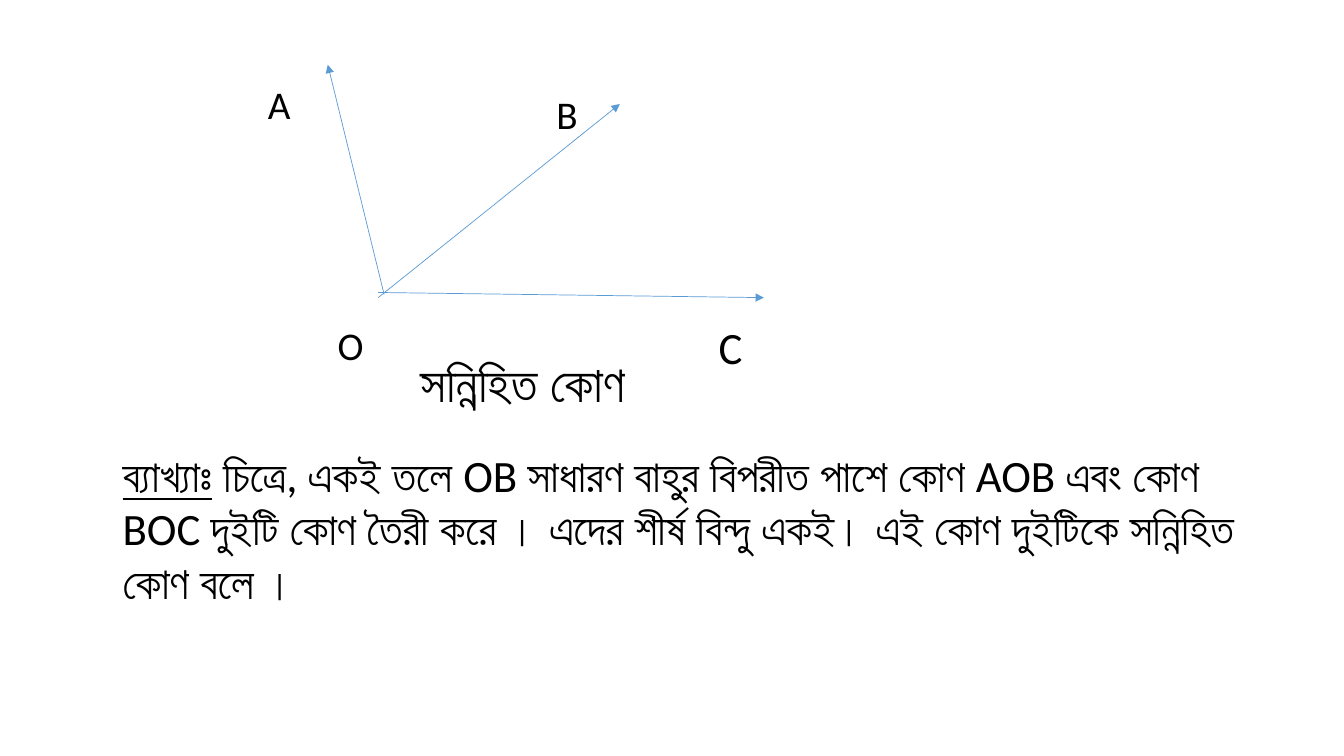
from lxml import etree
from pptx import Presentation
from pptx.dml.color import RGBColor
from pptx.enum.shapes import MSO_CONNECTOR
from pptx.enum.text import MSO_AUTO_SIZE
from pptx.oxml.ns import qn
from pptx.util import Cm, Pt

STRAIGHT = MSO_CONNECTOR.STRAIGHT
GROW = MSO_AUTO_SIZE.SHAPE_TO_FIT_TEXT
FONT = "Calibri"
BLACK = "000000"
BLUE = "5B9BD5"


def color(target, code):
    target.rgb = RGBColor.from_string(code)


def add_ray(shapes, start, end):
    """Draw a thin arrow between two points given in cm."""
    ray = shapes.add_connector(STRAIGHT, *map(Cm, start + end))
    color(ray.line.color, BLUE)
    ray.line.width = Pt(0.5)
    props = ray.line._get_or_add_ln()
    etree.SubElement(props, qn("a:tailEnd"), type="triangle")
    etree.SubElement(ray._element.spPr, qn("a:effectLst"))


def add_text(shapes, box, size, *parts):
    """Add a wrapped text box; each part is (text, underline)."""
    frame = shapes.add_textbox(*map(Cm, box)).text_frame
    frame.word_wrap = True
    frame.auto_size = GROW
    for text, under in parts:
        run = frame.paragraphs[0].add_run()
        run.text = text
        run.font.name = FONT
        run.font.size = Pt(size)
        run.font.underline = under
        color(run.font.color, BLACK)


def main():
    deck = Presentation()
    deck.slide_width, deck.slide_height = Cm(33.87), Cm(19.05)
    shapes = deck.slides.add_slide(deck.slide_layouts[6]).shapes

    # Rays OC, OA and OB
    add_ray(shapes, (9.53, 7.37), (19.25, 7.5))
    add_ray(shapes, (9.68, 7.42), (8.26, 1.63))
    add_ray(shapes, (9.53, 7.5), (15.62, 2.62))

    # Point labels
    labels = [
        ("A", (6.5, 1.91, 1.73, 1.45), 28),
        ("B", (13.77, 2.16, 1.24, 1.45), 28),
        ("O", (8.26, 7.98, 1.96, 1.45), 28),
        ("C", (17.86, 7.92, 1.42, 1.63), 32),
    ]
    for name, box, size in labels:
        add_text(shapes, box, size, (name, False))

    # Caption and explanation
    add_text(shapes, (10.36, 8.74, 6.78, 1.8), 36, ("সন্নিহিত কোণ", False))
    add_text(
        shapes, (2.84, 11.15, 29.06, 4.37), 32,
        ("ব্যাখ্যাঃ", True),
        (" চিত্রে, একই তলে OB সাধারণ বাহুর বিপরীত পাশে কোণ AOB এবং কোণ BOC "
         "দুইটি কোণ তৈরী করে । এদের শীর্ষ বিন্দু একই। এই কোণ দুইটিকে "
         "সন্নিহিত কোণ বলে ।", False),
    )

    deck.save("out.pptx")


if __name__ == "__main__":
    main()
